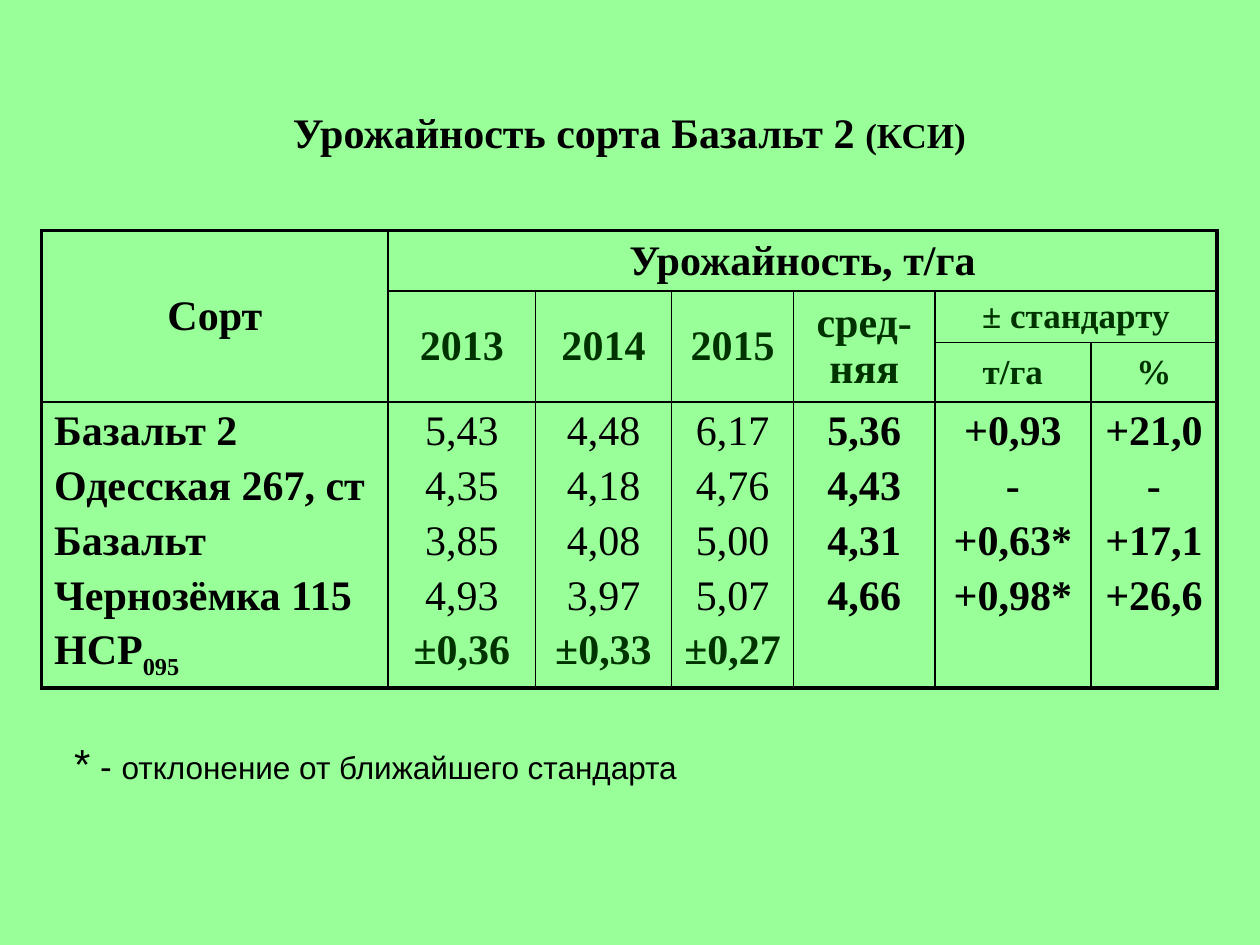
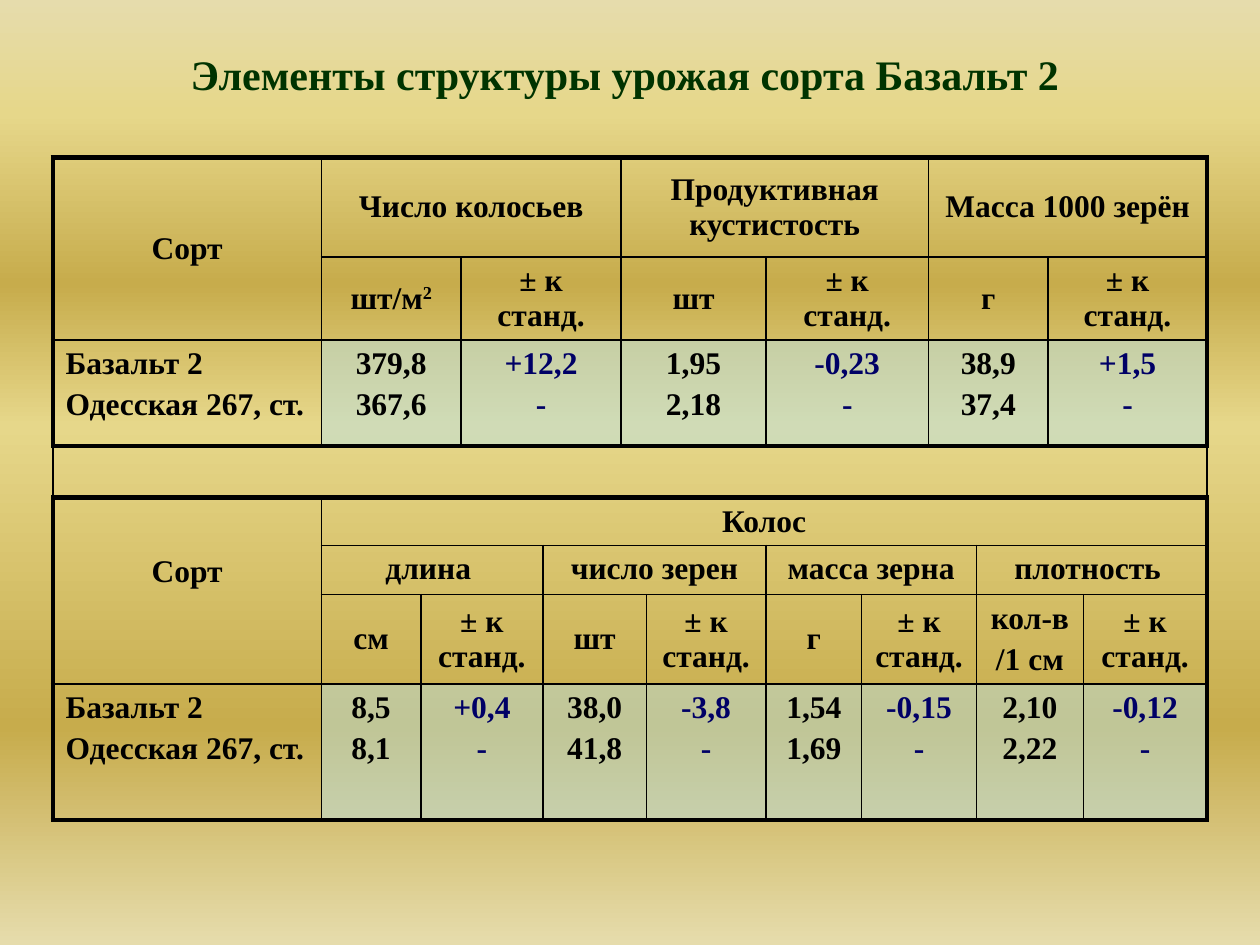
from dataclasses import dataclass
from typing import Optional

from lxml.etree import SubElement
from pptx import Presentation
from pptx.dml.color import RGBColor
from pptx.enum.text import MSO_ANCHOR as Anchor, PP_ALIGN as Align
from pptx.oxml.ns import qn
from pptx.util import Inches, Pt


class Theme:
    serif, sans = "Times New Roman", "Arial"
    black, green, navy = "000000", "003300", "000066"
    mint, ice = "99FF99", "BBE0E3"
    gold = [(0, "E6DCAC"), (12, "E6D78A"), (30, "C7AC4C"),
            (45, "E6D78A"), (77, "C7AC4C"), (100, "E6DCAC")]
    large, medium, small = 24, 20, 18
    title_alpha, tint_alpha = 29, 50
    thin = 1
    paragraph_gap = 0.2
    plain_table = "{2D5ABB26-0587-4C30-8999-92F81FD0307C}"


@dataclass
class Style:
    size: int = Theme.large
    color: str = Theme.black
    bold: bool = True
    align: Align = Align.CENTER
    anchor: Anchor = Anchor.TOP
    tinted: bool = False
    bottom: float = 0.05
    last: Optional["Style"] = None


MIDDLE = Anchor.MIDDLE
STYLES = {
    "heading": Style(anchor=MIDDLE),
    "year": Style(color=Theme.green, anchor=MIDDLE),
    "standard": Style(Theme.medium, Theme.green, anchor=MIDDLE),
    "variety": Style(align=Align.LEFT),
    "yield": Style(bold=False, last=Style(color=Theme.green)),
    "average": Style(),
    "small heading": Style(Theme.small, anchor=MIDDLE),
    "raised heading": Style(Theme.small, anchor=MIDDLE, bottom=0.35),
    "ear": Style(Theme.small),
    "small variety": Style(Theme.small, align=Align.LEFT),
    "measure": Style(Theme.small, tinted=True),
    "deviation": Style(Theme.small, Theme.navy, tinted=True),
}

YIELD_TITLE = [("Урожайность сорта Базальт 2 ", Theme.large), ("(КСИ)", Theme.medium)]
STRUCTURE_TITLE = [("Элементы структуры урожая сорта Базальт 2", Theme.large)]
FOOTNOTE = [("*", Theme.large), (" - ", Theme.medium),
            ("отклонение от ближайшего стандарта ", Theme.small)]

VARIETIES = "Базальт 2|Одесская 267, ст|Базальт|Чернозёмка 115|НСР_095"
PAIR = "Базальт 2|Одесская 267, ст."
VERSUS = "± к станд."


def cells(style, texts, columns=1, rows=1):
    return [(text, style, columns, rows) for text in texts]


def alternating(values, spans):
    return [(text, ("measure", "deviation")[index % 2], span, 1)
            for index, (text, span) in enumerate(zip(values, spans))]


def small_headings(texts, spans):
    return [(text, "small heading", span, 1) for text, span in zip(texts, spans)]


EAR_SPANS = [1, 2, 2, 1, 1, 2, 2, 1]

YIELD_TABLE = {
    "at": (0.33, 1.83),
    "columns": [2.75, 1.17, 1.08, 0.97, 1.12, 1.24, 1],
    "heights": [0.48, 0.41, 0.47, 2.27],
    "blocks": [(0, 3)],
    "outline": 2.25,
    "rows": [
        cells("heading", ["Сорт"], rows=3) + cells("heading", ["Урожайность, т/га"], 6),
        cells("year", ["2013", "2014", "2015", "сред-няя"], rows=2)
        + cells("standard", ["± стандарту"], 2),
        cells("standard", ["т/га", "%"]),
        cells("variety", [VARIETIES])
        + cells("yield", ["5,43|4,35|3,85|4,93|±0,36", "4,48|4,18|4,08|3,97|±0,33",
                          "6,17|4,76|5,00|5,07|±0,27"])
        + cells("average", ["5,36|4,43|4,31|4,66", "+0,93|-|+0,63*|+0,98*",
                            "+21,0|-|+17,1|+26,6"]),
    ],
}

STRUCTURE_TABLE = {
    "at": (0.42, 1.25),
    "columns": [2.13, 0.79, 0.32, 0.65, 0.62, 0.2, 0.95, 0.76, 0.53, 0.38, 0.57, 0.28, 0.98],
    "heights": [0.79, 0.66, 0.84, 0.41, 0.38, 0.39, 0.71, 1.08],
    "blocks": [(0, 2), (4, 7)],
    "outline": 3,
    "rows": [
        cells("small heading", ["Сорт"], rows=2)
        + cells("small heading",
                ["Число колосьев", "Продуктивная кустистость", "Масса 1000 зерён"], 4),
        cells("small heading", ["шт/м^2", VERSUS, "шт", VERSUS, "г", VERSUS], 2),
        cells("small variety", [PAIR])
        + alternating(["379,8|367,6", "+12,2|-", "1,95|2,18", "-0,23|-",
                       "38,9|37,4", "+1,5|-"], [2] * 6),
        cells("ear", [""], 13),
        cells("raised heading", ["Сорт"], rows=3) + cells("ear", ["Колос"], 12),
        cells("ear", ["длина ", "число зерен", "масса зерна", "плотность "], 3),
        small_headings(["см", VERSUS, "шт", VERSUS, "г", VERSUS, "кол-в|/1 см", VERSUS],
                       EAR_SPANS),
        cells("small variety", [PAIR])
        + alternating(["8,5|8,1", "+0,4|-", "38,0|41,8", "-3,8|-", "1,54|1,69",
                       "-0,15|-", "2,10|2,22", "-0,12|-"], EAR_SPANS),
    ],
}


def color_of(value):
    return RGBColor.from_string(value)


def fill_solid(fill, color):
    fill.solid()
    fill.fore_color.rgb = color_of(color)


def set_alpha(properties, percent):
    color = properties.find(qn("a:solidFill")).find(qn("a:srgbClr"))
    SubElement(color, qn("a:alpha"), val=str(percent * 1000))


def set_font(font, name, color, bold, size=None):
    font.name, font.bold = name, bold
    font.color.rgb = color_of(color)
    if size:
        font.size = Pt(size)


def add_runs(paragraph, parts):
    for text, size in parts:
        run = paragraph.add_run()
        run.text = text
        run.font.size = Pt(size)


def add_titled_slide(presentation, parts, color, box):
    slide = presentation.slides.add_slide(presentation.slide_layouts[5])
    title = slide.shapes.title
    title.left, title.top, title.width, title.height = map(Inches, box)
    title.text_frame.vertical_anchor = MIDDLE
    paragraph = title.text_frame.paragraphs[0]
    paragraph.alignment = Align.CENTER
    set_font(paragraph.font, Theme.serif, color, True)
    add_runs(paragraph, parts)
    return slide


def fill_gold(slide):
    fill = slide.background.fill
    fill.gradient()
    fill.gradient_angle = 270
    stops = slide.background._cSld.find(".//" + qn("a:gsLst"))
    stops.clear()
    for position, color in Theme.gold:
        stop = SubElement(stops, qn("a:gs"), pos=str(position * 1000))
        SubElement(stop, qn("a:srgbClr"), val=color)


def write_cell(cell, text, style):
    cell.vertical_anchor = style.anchor
    cell.margin_bottom = Inches(style.bottom)
    lines = text.split("|")
    for index, line in enumerate(lines):
        frame = cell.text_frame
        paragraph = frame.add_paragraph() if index else frame.paragraphs[0]
        look = style.last if style.last and index == len(lines) - 1 else style
        paragraph.alignment = look.align
        if index:
            paragraph.space_before = Pt(look.size * Theme.paragraph_gap)
        set_font(paragraph.font, Theme.serif, look.color, look.bold, look.size)
        mark, baseline = ("_", "-25000") if "_" in line else ("^", "30000")
        base, _, script = line.partition(mark)
        if base:
            paragraph.add_run().text = base
        if script:
            run = paragraph.add_run()
            run.text = script
            run.font._element.set("baseline", baseline)


def fill_cell(cell, style, background):
    color = Theme.ice if style.tinted else background
    if not color:
        cell.fill.background()
        return
    fill_solid(cell.fill, color)
    if style.tinted:
        set_alpha(cell._tc.tcPr, Theme.tint_alpha)


def set_borders(cell, widths):
    properties = cell._tc.get_or_add_tcPr()
    for index, (side, width) in enumerate(widths.items()):
        line = properties.makeelement(qn("a:ln" + side), {"w": str(Pt(width))})
        fill = SubElement(line, qn("a:solidFill"))
        SubElement(fill, qn("a:srgbClr"), val=Theme.black)
        properties.insert(index, line)


def border_widths(content, top, left, bottom, right):
    starts, ends = zip(*content["blocks"])
    in_block = any(first <= top <= last for first, last in content["blocks"])
    thick_sides = {
        "L": in_block and left == 0,
        "R": in_block and right == len(content["columns"]) - 1,
        "T": top in starts or top - 1 in ends,
        "B": bottom in ends or bottom + 1 in starts,
    }
    return {side: content["outline"] if thick else Theme.thin
            for side, thick in thick_sides.items()}


def add_grid(slide, content, background=None):
    columns, heights = content["columns"], content["heights"]
    left, top = content["at"]
    frame = slide.shapes.add_table(len(heights), len(columns), Inches(left), Inches(top),
                                   Inches(sum(columns)), Inches(sum(heights)))
    table = frame.table
    table.first_row = table.horz_banding = False
    table._tbl.tblPr.find(qn("a:tableStyleId")).text = Theme.plain_table
    for column, width in zip(table.columns, columns):
        column.width = Inches(width)
    for row, height in zip(table.rows, heights):
        row.height = Inches(height)

    taken = set()
    for row, entries in enumerate(content["rows"]):
        for text, style_name, column_span, row_span in entries:
            start = next(c for c in range(len(columns)) if (row, c) not in taken)
            bottom, right = row + row_span - 1, start + column_span - 1
            cell, style = table.cell(row, start), STYLES[style_name]
            if row_span * column_span > 1:
                cell.merge(table.cell(bottom, right))
            write_cell(cell, text, style)
            widths = border_widths(content, row, start, bottom, right)
            for r in range(row, bottom + 1):
                for c in range(start, right + 1):
                    taken.add((r, c))
                    on_edge = {"L": c == start, "R": c == right,
                               "T": r == row, "B": r == bottom}
                    is_origin = (r, c) == (row, start)
                    fill_cell(table.cell(r, c), style, background)
                    set_borders(table.cell(r, c), {side: width for side, width in widths.items()
                                                   if is_origin or on_edge[side]})


def add_footnote(slide):
    box = slide.shapes.add_textbox(Inches(0), Inches(5.8), Inches(10), Inches(0.5))
    box.text_frame.word_wrap = True
    box.text_frame.vertical_anchor = MIDDLE
    paragraph = box.text_frame.paragraphs[0]
    paragraph.alignment = Align.JUSTIFY
    paragraph._p.get_or_add_pPr().set("indent", str(Inches(0.49)))
    set_font(paragraph.font, Theme.sans, Theme.black, False)
    add_runs(paragraph, FOOTNOTE)


def main():
    presentation = Presentation()
    presentation.slide_width, presentation.slide_height = Inches(10), Inches(7.5)

    slide = add_titled_slide(presentation, YIELD_TITLE, Theme.black, (0.58, 0.67, 8.83, 0.75))
    fill_solid(slide.background.fill, Theme.mint)
    title = slide.shapes.title
    fill_solid(title.fill, Theme.mint)
    set_alpha(title._element.spPr, Theme.title_alpha)
    add_grid(slide, YIELD_TABLE, Theme.mint)
    add_footnote(slide)

    slide = add_titled_slide(presentation, STRUCTURE_TITLE, Theme.green, (0.17, 0.17, 9.58, 0.83))
    fill_gold(slide)
    add_grid(slide, STRUCTURE_TABLE)

    presentation.save("out.pptx")


if __name__ == "__main__":
    main()
